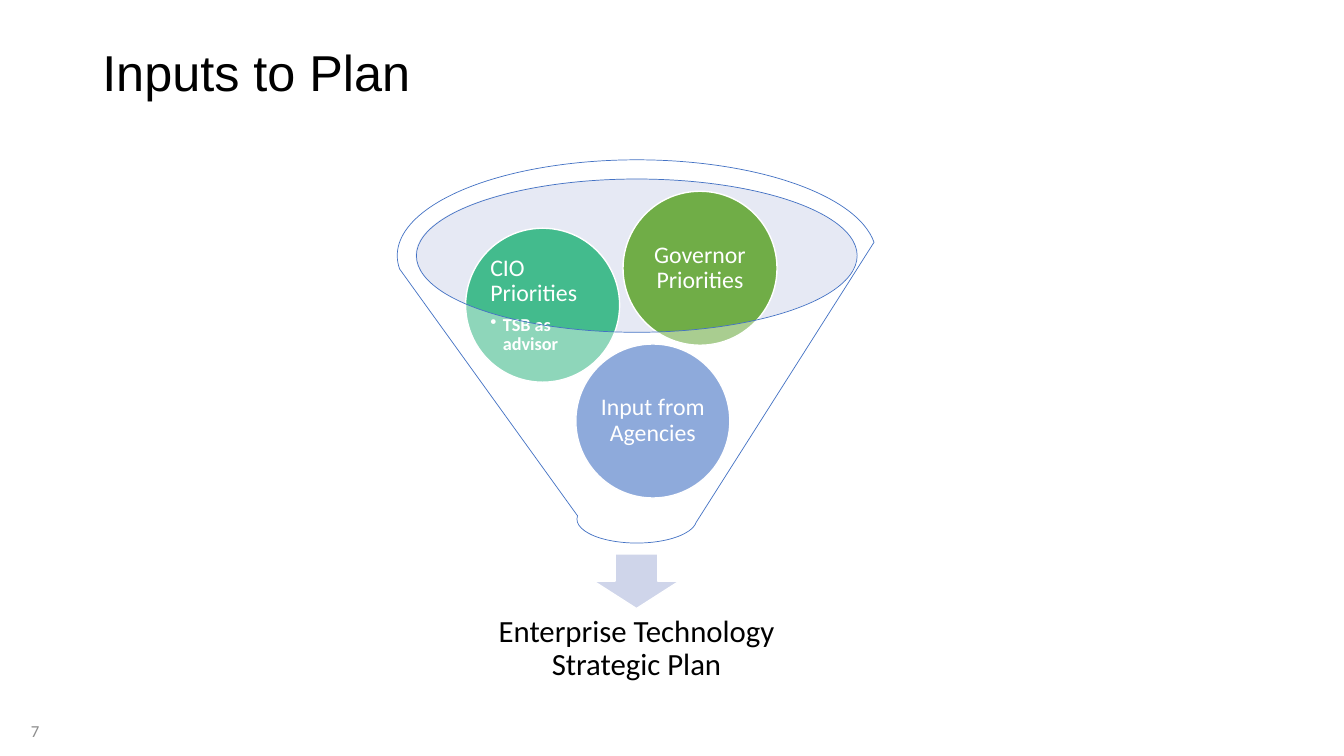
from dataclasses import dataclass

from lxml import etree
from pptx import Presentation
from pptx.dml.color import RGBColor
from pptx.enum.shapes import MSO_SHAPE as Preset
from pptx.enum.text import MSO_ANCHOR as Anchor, PP_ALIGN as Align
from pptx.oxml.ns import qn
from pptx.shapes.autoshape import Shape
from pptx.slide import Slide
from pptx.util import Pt

BLACK, WHITE, GREY, BLUE = "000000", "FFFFFF", "8C8C8C", "4472C4"
BALL_SIZE = 110


@dataclass
class Line:
    text: str
    size: float
    color: str
    font: str = "Calibri"
    align: Align = Align.CENTER
    spacing: float = 0.9
    after: float = 0
    bold: bool = False
    bullet_indent: float = 0


@dataclass
class Label:
    box: tuple[float, float, float, float]
    line: Line
    insets: tuple[float, float] = (7.2, 3.6)


@dataclass
class Ball:
    left: float
    top: float
    fill: str
    lines: list[Line]


def rgb(value: str) -> RGBColor:
    return RGBColor.from_string(value)


def write(shape: Shape, lines: list[Line], insets: tuple[float, float]) -> None:
    frame = shape.text_frame
    frame.word_wrap = True
    frame.vertical_anchor = Anchor.MIDDLE
    frame.margin_left = frame.margin_right = Pt(insets[0])
    frame.margin_top = frame.margin_bottom = Pt(insets[1])
    for index, line in enumerate(lines):
        para = frame.add_paragraph() if index else frame.paragraphs[0]
        para.alignment = line.align
        para.line_spacing = line.spacing
        para.space_after = Pt(line.after)
        if line.bullet_indent:
            para.level = 1
            props = para._p.get_or_add_pPr()
            props.set("marL", str(Pt(line.bullet_indent)))
            props.set("indent", str(-Pt(line.bullet_indent)))
            etree.SubElement(props, qn("a:buChar")).set("char", "•")
        run = para.add_run()
        run.text = line.text
        run.font.name = line.font
        run.font.size = Pt(line.size)
        run.font.bold = line.bold
        run.font.color.rgb = rgb(line.color)


def add_label(slide: Slide, label: Label) -> None:
    box = slide.shapes.add_textbox(*map(Pt, label.box))
    write(box, [label.line], label.insets)


def add_preset(slide: Slide, preset: Preset, box: tuple[float, float, float, float],
               fill: str, opacity: int = 100, outline: str = "",
               width: float = 1) -> Shape:
    shape = slide.shapes.add_shape(preset, *map(Pt, box))
    shape.shadow.inherit = False
    shape.fill.solid()
    shape.fill.fore_color.rgb = rgb(fill)
    if opacity < 100:
        color = shape.fill._xPr.find(f"{qn('a:solidFill')}/{qn('a:srgbClr')}")
        etree.SubElement(color, qn("a:alpha")).set("val", str(opacity * 1000))
    if outline:
        shape.line.color.rgb = rgb(outline)
        shape.line.width = Pt(width)
    else:
        shape.line.fill.background()
    return shape


def add_ball(slide: Slide, ball: Ball) -> None:
    shape = add_preset(slide, Preset.OVAL, (ball.left, ball.top, BALL_SIZE, BALL_SIZE),
                       ball.fill, outline=WHITE)
    write(shape, ball.lines, (1.5, 1.5))


def priority(text: str, align: Align = Align.CENTER) -> Line:
    return Line(text, 17, WHITE, align=align, after=6)


LABELS = [
    Label((66, 1.5, 828, 104.4),
          Line("Inputs to Plan", 36, BLACK, "Arial", Align.LEFT)),
    Label((0, 507.6, 35.3, 28.8),
          Line("7", 12, GREY, align=Align.RIGHT, spacing=1)),
    Label((308.2, 427, 293, 73.4),
          Line("Enterprise Technology Strategic Plan", 22, BLACK, after=7.7), (12, 12)),
]

BALLS = [
    Ball(411.3, 245.7, BLUE, [priority("Input from Agencies")]),
    Ball(332.6, 163, "43BB8D", [
        priority("CIO Priorities", Align.LEFT),
        Line("TSB as advisor", 13, WHITE, align=Align.LEFT, after=2,
             bold=True, bullet_indent=9),
    ]),
    Ball(445, 136.6, "70AD47", [priority("Governor Priorities")]),
]


def main() -> None:
    deck = Presentation()
    deck.slide_width, deck.slide_height = Pt(960), Pt(540)
    slide = deck.slides.add_slide(deck.slide_layouts[6])

    # Funnel mouth and outflow arrow
    add_preset(slide, Preset.OVAL, (296.8, 127.6, 315.2, 109.5), "C1C9E4", opacity=40)
    add_preset(slide, Preset.DOWN_ARROW, (424.1, 395.6, 61.1, 39.1), "CFD5EA",
               outline=WHITE)

    # Title, page number and outcome
    for label in LABELS:
        add_label(slide, label)

    # Inputs, seen through the funnel wall
    for ball in BALLS:
        add_ball(slide, ball)
    add_preset(slide, Preset.FUNNEL, (283.8, 114.2, 342.2, 273.7), WHITE,
               opacity=40, outline=BLUE, width=0.5)

    deck.save("out.pptx")


if __name__ == "__main__":
    main()
